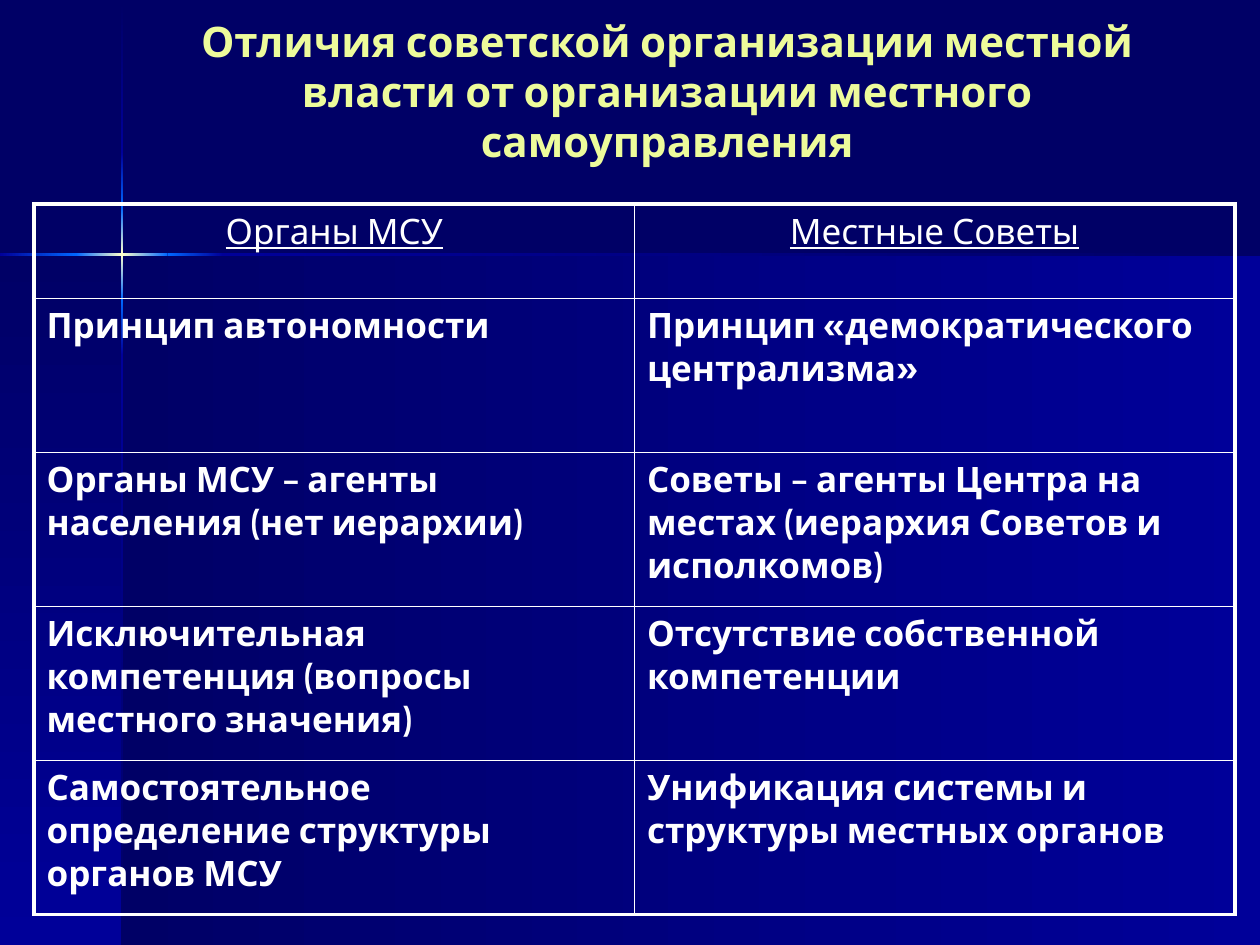
from itertools import pairwise

from lxml import etree
from pptx import Presentation
from pptx.dml.color import RGBColor
from pptx.enum.shapes import MSO_SHAPE
from pptx.enum.text import MSO_ANCHOR, PP_ALIGN
from pptx.oxml.ns import qn
from pptx.util import Inches, Pt

RECTANGLE = MSO_SHAPE.RECTANGLE
MIDDLE, TOP = MSO_ANCHOR.MIDDLE, MSO_ANCHOR.TOP
CENTER, LEFT = PP_ALIGN.CENTER, PP_ALIGN.LEFT

NIGHT, BLUE, GLOW, CREAM = "000066", "000099", "0066FF", "FFFFCC"
WHITE, YELLOW = "FFFFFF", "EDFB9B"
FONT = "Cabin"
THICK, THIN = 2.25, 1

TITLE = ("Отличия советской организации местной власти "
         "от организации местного самоуправления")
ROWS = [
    ("Органы МСУ", "Местные Советы"),
    ("Принцип автономности", "Принцип «демократического централизма»"),
    ("Органы МСУ – агенты населения (нет иерархии)",
     "Советы – агенты Центра на местах (иерархия Советов и исполкомов)"),
    ("Исключительная компетенция (вопросы местного значения)",
     "Отсутствие собственной компетенции"),
    ("Самостоятельное определение структуры органов МСУ",
     "Унификация системы и структуры местных органов"),
]

# Colours along each beam of light, one entry per segment
BEAM = [(NIGHT, BLUE), (BLUE, GLOW), (GLOW, CREAM, GLOW), (GLOW, BLUE), (BLUE, NIGHT)]


def color(value):
    return RGBColor.from_string(value)


class Page:
    """Draws on one slide; lengths are percent of its width and height."""

    def __init__(self, deck):
        self.deck = deck
        self.slide = deck.slides.add_slide(deck.slide_layouts[6])
        background = self.slide.background.fill
        background.solid()
        background.fore_color.rgb = color(NIGHT)

    def across(self, share):
        return round(self.deck.slide_width * share / 100)

    def down(self, share):
        return round(self.deck.slide_height * share / 100)

    def place(self, left, top, width, height):
        return self.across(left), self.down(top), self.across(width), self.down(height)

    def gradient(self, place, colors, angle):
        box = self.slide.shapes.add_shape(RECTANGLE, *self.place(*place))
        box.shadow.inherit = False
        box.line.fill.background()
        box.fill.gradient()
        box.fill.gradient_angle = (360 - angle) % 360
        stops = box._element.spPr.find(qn("a:gradFill")).find(qn("a:gsLst"))
        for stop in list(stops):
            stops.remove(stop)
        for index, value in enumerate(colors):
            position = 100000 * index // (len(colors) - 1)
            stop = etree.SubElement(stops, qn("a:gs"), pos=str(position))
            etree.SubElement(stop, qn("a:srgbClr"), val=value)

    def text(self, frame, words, size, value, align, bold=True, underline=False):
        frame.word_wrap = True
        frame.text = words
        para = frame.paragraphs[0]
        para.alignment = align
        font = para.runs[0].font
        font.name, font.size = FONT, Pt(size)
        font.bold, font.underline = bold, underline
        font.color.rgb = color(value)
        return para

    def title(self, place, words):
        box = self.slide.shapes.add_textbox(*self.place(*place))
        box.text_frame.vertical_anchor = MIDDLE
        self.text(box.text_frame, words, 24, YELLOW, CENTER)

    def borders(self, cell, widths):
        properties = cell._tc.get_or_add_tcPr()
        for index, (side, width) in enumerate(widths.items()):
            line = etree.Element(qn("a:ln" + side), w=str(Pt(width)))
            fill = etree.SubElement(line, qn("a:solidFill"))
            etree.SubElement(fill, qn("a:srgbClr"), val=WHITE)
            properties.insert(index, line)

    def table(self, place, rows, heights):
        last_row, last_column = len(rows) - 1, len(rows[0]) - 1
        table = self.slide.shapes.add_table(
            len(rows), len(rows[0]), *self.place(*place)).table
        table.first_row = table.horz_banding = False
        for r, texts in enumerate(rows):
            table.rows[r].height = self.down(heights[r])
            header = r == 0
            for c, words in enumerate(texts):
                cell = table.cell(r, c)
                cell.fill.background()
                cell.vertical_anchor = TOP
                para = self.text(cell.text_frame, words, 20, WHITE,
                                 CENTER if header else LEFT,
                                 bold=not header, underline=header)
                para.space_before = Pt(4)
                # The outer frame is thicker than the inner lines
                outer = {"L": c == 0, "R": c == last_column,
                         "T": r == 0, "B": r == last_row}
                self.borders(cell, {side: THICK if edge else THIN
                                    for side, edge in outer.items()})


def main():
    deck = Presentation()
    deck.slide_width, deck.slide_height = Inches(10), Inches(7.5)
    page = Page(deck)

    # Background panels
    page.gradient((9.7, 26.93, 90.3, 73.07), (NIGHT, BLUE), 0)
    page.gradient((0, 26.93, 9.7, 73.07), (NIGHT, BLUE), 90)

    # Crossing beams of light
    for (start, end), colors in zip(pairwise([0.13, 16.13, 22, 31.73, 37.6, 100]), BEAM):
        page.gradient((9.6, start, 0.2, end - start), colors, 90)
    for (start, end), colors in zip(pairwise([0, 6.05, 13.3, 17.7, 100]), BEAM[1:]):
        page.gradient((start, 26.8, end - start, 0.27), colors, 0)

    # Title and comparison table
    page.title((11.7, 1.73, 82.5, 15.73), TITLE)
    page.table((2.7, 21.6, 95.3, 75.2), ROWS, [10] + [16.3] * 4)

    deck.save("out.pptx")


if __name__ == "__main__":
    main()
